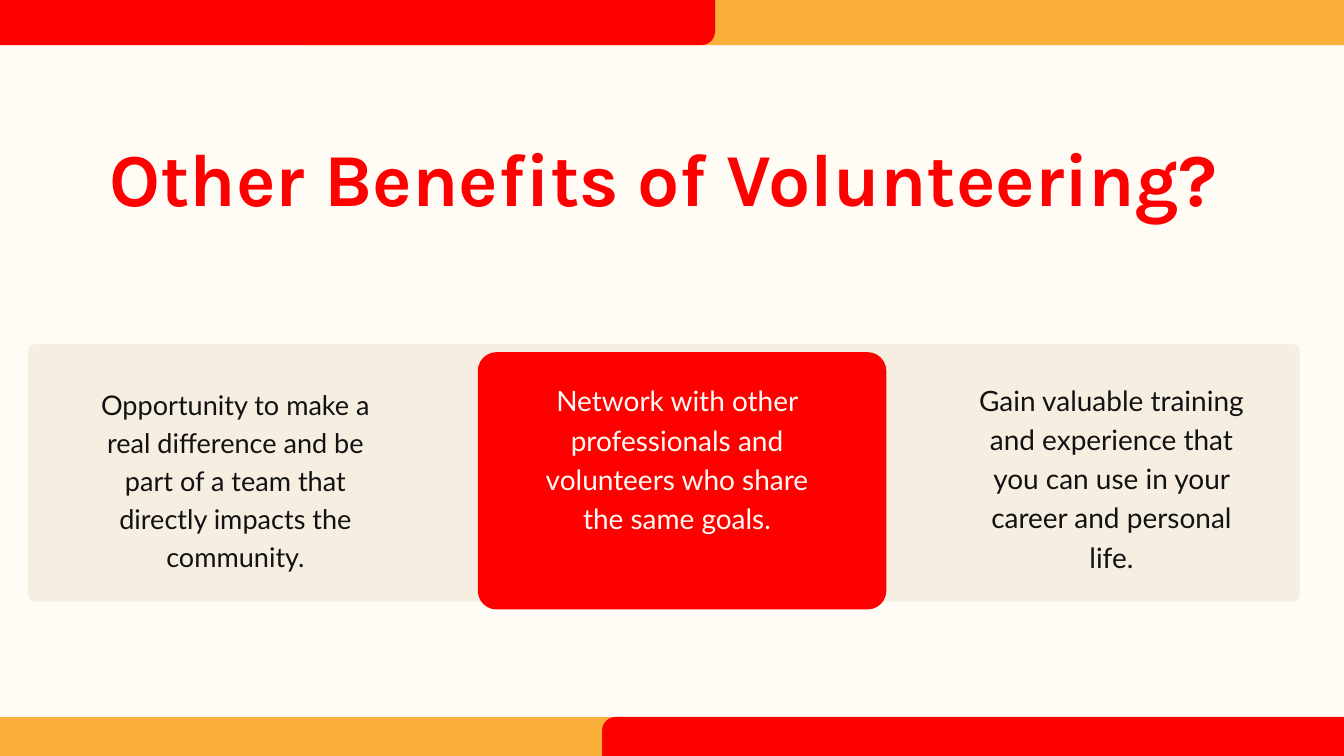
from dataclasses import dataclass
from typing import Any

from pptx import Presentation
from pptx.dml.color import RGBColor
from pptx.enum.shapes import MSO_SHAPE as Shape
from pptx.enum.text import MSO_ANCHOR as Anchor, PP_ALIGN as Align
from pptx.util import Inches, Pt

COLORS = {
    "cream": "FFFBF5",
    "red": "FF0000",
    "amber": "FBB03B",
    "sand": "F6EEE1",
    "ink": "121212",
}


def color(name):
    return RGBColor.from_string(COLORS[name])


def write(frame, text, *, font, size, ink, leading, bold=False):
    frame.word_wrap = True
    frame.vertical_anchor = Anchor.TOP
    frame.margin_left = frame.margin_right = 0
    frame.margin_top = frame.margin_bottom = 0
    paragraph = frame.paragraphs[0]
    paragraph.alignment = Align.CENTER
    paragraph.line_spacing = Pt(leading)
    run = paragraph.add_run()
    run.text = text
    run.font.name = font
    run.font.size = Pt(size)
    run.font.bold = bold
    run.font.color.rgb = color(ink)


@dataclass
class Canvas:
    """Holds the slide and its fonts, and draws panels and text."""

    slide: Any
    heading_font: str = "Karla"
    body_font: str = "Lato"

    def background(self, fill):
        self.slide.background.fill.solid()
        self.slide.background.fill.fore_color.rgb = color(fill)

    def panel(self, left, top, width, height, fill, radius=0, turn=0):
        kind = Shape.ROUNDED_RECTANGLE if radius else Shape.RECTANGLE
        panel = self.slide.shapes.add_shape(
            kind, Inches(left), Inches(top), Inches(width), Inches(height))
        if radius:
            panel.adjustments[0] = radius / min(width, height)
        panel.rotation = turn
        panel.shadow.inherit = False
        panel.fill.solid()
        panel.fill.fore_color.rgb = color(fill)
        panel.line.fill.background()

    def text(self, left, top, width, height, words, **style):
        box = self.slide.shapes.add_textbox(
            Inches(left), Inches(top), Inches(width), Inches(height))
        write(box.text_frame, words, **style)

    def heading(self, left, top, width, height, words, size):
        self.text(left, top, width, height, words, font=self.heading_font,
                  size=size, ink="red", leading=size, bold=True)

    def benefit(self, left, top, width, height, words, size, ink="ink"):
        self.text(left, top, width, height, words, font=self.body_font,
                  size=size, ink=ink, leading=round(size * 1.4, 1))

    def band(self, amber_left, red_left, amber_top, red_top, turn=0):
        self.panel(amber_left, amber_top, 16.11, 1.95, "amber", turn=turn)
        self.panel(red_left, red_top, 14.06, 1.56, "red", 0.2, turn)


def main():
    deck = Presentation()
    deck.slide_width, deck.slide_height = Inches(20), Inches(11.25)
    canvas = Canvas(deck.slides.add_slide(deck.slide_layouts[6]))
    canvas.background("cream")

    canvas.heading(0.42, 2.18, 18.92, 1.16,
                   "Other Benefits of Volunteering?", 80)
    canvas.band(-1.01, 8.96, 10.67, 10.67)

    canvas.panel(0.42, 5.12, 18.92, 3.83, "sand", 0.1)
    canvas.panel(7.11, 5.24, 6.08, 3.83, "red", 0.28)
    canvas.benefit(1.38, 5.7, 4.25, 2.79,
                   "Opportunity to make a real difference and be part of "
                   "a team that directly impacts the community.", 29)
    canvas.benefit(14.42, 5.62, 4.24, 2.84,
                   "Gain valuable training and experience that you can use "
                   "in your career and personal life.", 30)
    canvas.benefit(7.83, 5.63, 4.49, 2.27,
                   "Network with other professionals and volunteers who "
                   "share the same goals.", 30, "cream")

    canvas.band(4.5, -3.42, -1.28, -0.89, turn=180)
    deck.save("out.pptx")


if __name__ == "__main__":
    main()
